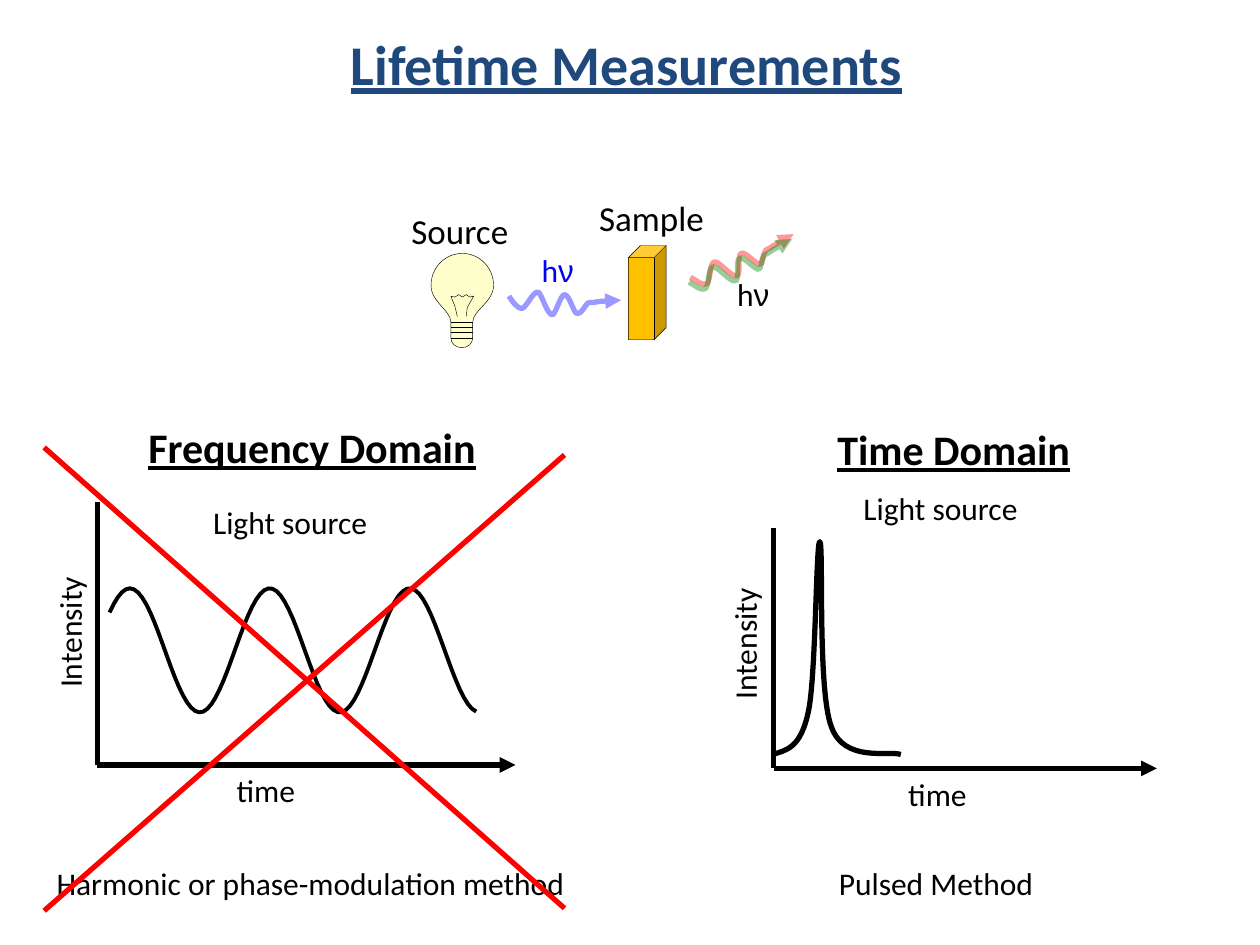
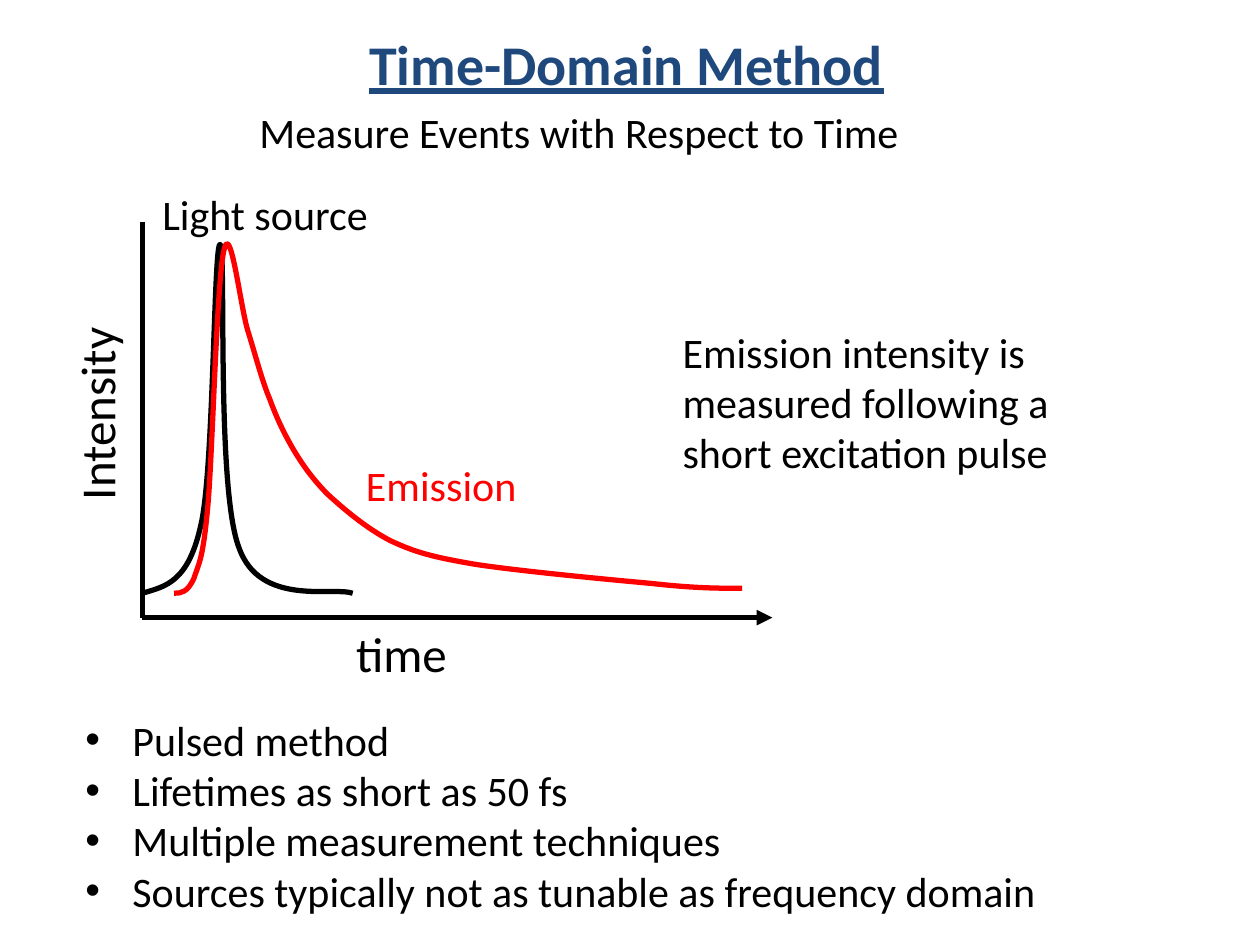
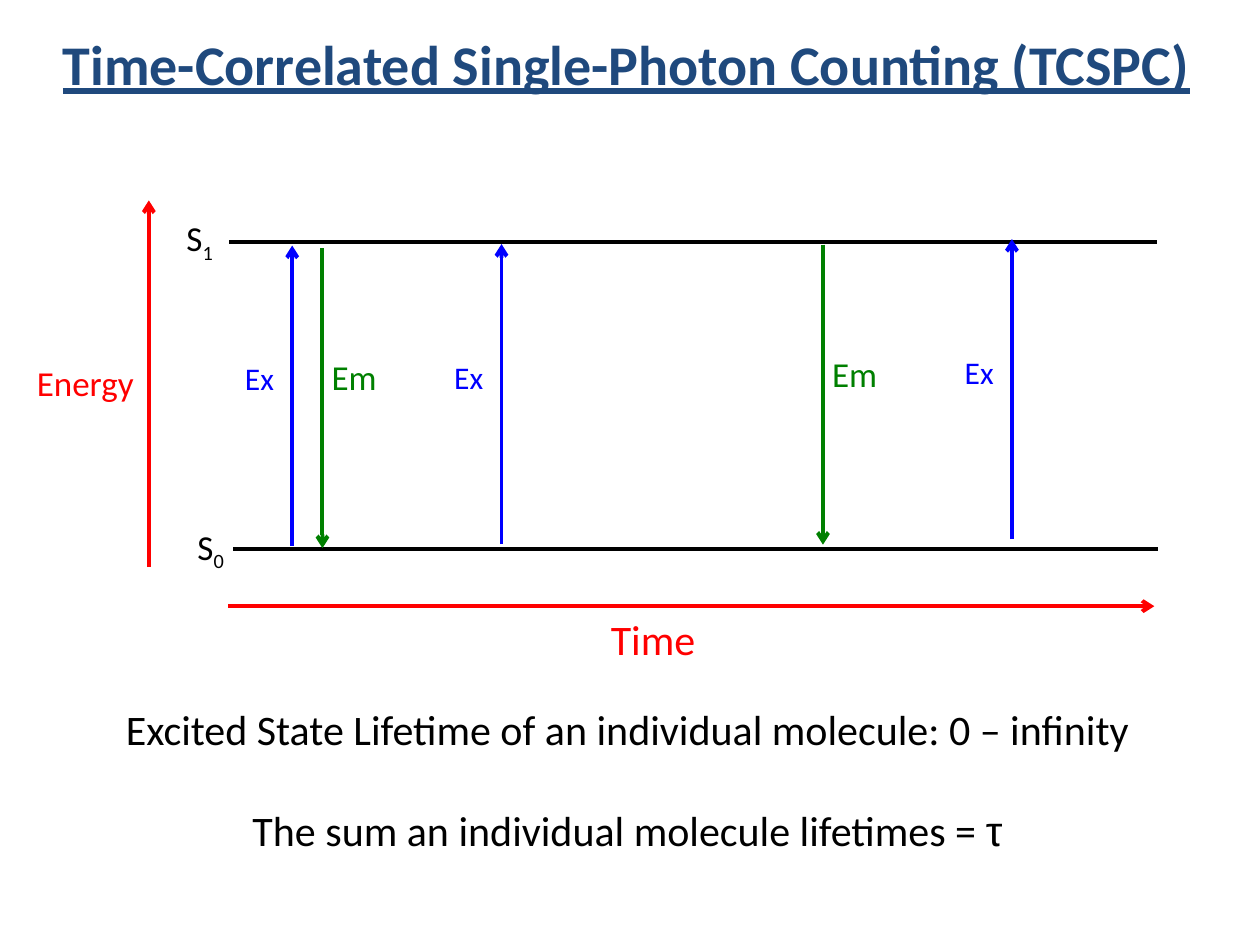
from math import cos, pi

from lxml.etree import SubElement
from pptx import Presentation
from pptx.dml.color import RGBColor
from pptx.enum.shapes import MSO_CONNECTOR, MSO_SHAPE
from pptx.enum.text import MSO_ANCHOR, PP_ALIGN
from pptx.oxml.ns import qn
from pptx.util import Cm, Pt

NAVY = RGBColor(0x1F, 0x49, 0x7D)
BLACK = RGBColor(0x00, 0x00, 0x00)
RED = RGBColor(0xFF, 0x00, 0x00)
BLUE = RGBColor(0x00, 0x00, 0xFF)
GREEN = RGBColor(0x00, 0x80, 0x00)
AMBER = RGBColor(0xFF, 0xC0, 0x00)
CREAM = RGBColor(0xFF, 0xFF, 0xCC)
LEFT, CENTER, RIGHT = PP_ALIGN.LEFT, PP_ALIGN.CENTER, PP_ALIGN.RIGHT
BODY_FONT, SYMBOL_FONT = "Calibri", "Arial"

TITLES = (
    "Lifetime Measurements",
    "Time-Domain Method",
    "Time-Correlated Single-Photon Counting (TCSPC)",
)
TITLE_PLACE = (0.97, 0, 23.32, 2.54)

DOMAIN_HEADINGS = (
    ("Frequency Domain", (2.67, 8.38, 7.24, 1.27)),
    ("Time Domain", (15.95, 8.41, 6.55, 1.27)),
)
DOMAIN_LABELS = (
    ("Light source", (3.97, 10.01, 3.76, 1.02), CENTER, 0),
    ("Intensity", (-1.37, 12.24, 5.54, 1.02), CENTER, 270),
    ("time", (4.52, 15.42, 3.12, 1.02), LEFT, 0),
    ("Harmonic or phase-modulation method", (0.89, 17.3, 10.95, 1.02), LEFT, 0),
    ("Light source", (17.08, 9.73, 3.76, 1.02), CENTER, 0),
    ("Intensity", (13.23, 12.47, 3.56, 1.02), CENTER, 270),
    ("time", (18.06, 15.49, 2.87, 1.02), LEFT, 0),
    ("Pulsed Method", (16.66, 17.3, 5.03, 1.02), LEFT, 0),
)
CROSS = ((0.89, 9.02, 11.38, 18.31), (0.89, 18.36, 11.38, 9.17))

BULB = (
    (9.09, 6.81),
    (9.09, 6.7), (9.09, 6.6), (9.09, 6.5),
    (9.09, 6.25), (8.69, 6.1), (8.69, 5.75),
    (8.69, 5.4), (8.97, 5.11), (9.32, 5.11),
    (9.67, 5.11), (9.95, 5.4), (9.95, 5.75),
    (9.95, 6.1), (9.53, 6.25), (9.53, 6.5),
    (9.53, 6.6), (9.53, 6.7), (9.53, 6.81),
    (9.53, 6.92), (9.44, 7.01), (9.31, 7.01),
    (9.18, 7.01), (9.09, 6.92), (9.09, 6.81),
)
FILAMENT = (
    (9.22, 6.38), (9.17, 6.17), (9.09, 5.97), (9.17, 5.99),
    (9.25, 5.94), (9.32, 5.99), (9.4, 5.94), (9.47, 5.99),
    (9.55, 5.97), (9.42, 6.2), (9.4, 6.38),
)
BULB_BANDS = (6.5, 6.6, 6.7, 6.81)

EXCITATION_WAVE = (
    (12.52, 6.05),
    (12.52, 6.05), (12.09, 6.07), (11.96, 6.1),
    (11.84, 6.1), (11.89, 6.1), (11.84, 6.12),
    (11.79, 6.17), (11.71, 6.35), (11.63, 6.32),
    (11.56, 6.3), (11.48, 5.94), (11.38, 5.94),
    (11.3, 5.94), (11.2, 6.35), (11.13, 6.35),
    (11.02, 6.32), (10.92, 5.92), (10.85, 5.89),
    (10.74, 5.87), (10.62, 6.2), (10.52, 6.22),
    (10.44, 6.22), (10.34, 6.1), (10.26, 5.97),
)
EMITTED_WAVE = (
    (16, 4.72),
    (16, 4.72), (15.62, 4.93), (15.52, 5),
    (15.42, 5.05), (15.44, 5.03), (15.42, 5.08),
    (15.37, 5.13), (15.39, 5.33), (15.32, 5.33),
    (15.24, 5.33), (15.01, 5.05), (14.94, 5.11),
    (14.86, 5.13), (14.94, 5.54), (14.86, 5.56),
    (14.76, 5.61), (14.5, 5.26), (14.4, 5.28),
    (14.3, 5.31), (14.33, 5.66), (14.25, 5.72),
    (14.17, 5.77), (14.05, 5.66), (13.92, 5.59),
)

PULSE = (
    (0, 1),
    (0.11, 0.98), (0.22, 0.97), (0.28, 0.8),
    (0.34, 0.64), (0.34, -0.01), (0.37, 0),
    (0.4, 0.01), (0.35, 0.7), (0.46, 0.87),
    (0.56, 1.04), (0.91, 0.98), (1, 1),
)
EMISSION_DECAY = (
    (3.51, 11.96),
    (3.66, 11.96), (3.78, 11.94), (3.91, 11.66),
    (4.01, 11.35), (4.09, 11.3), (4.19, 10.21),
    (4.29, 9.09), (4.37, 5.61), (4.52, 5.03),
    (4.65, 4.45), (4.85, 6.2), (5, 6.68),
    (5.16, 7.19), (5.28, 7.67), (5.44, 8.05),
    (5.59, 8.46), (5.74, 8.76), (5.92, 9.07),
    (6.12, 9.4), (6.3, 9.65), (6.6, 9.96),
    (6.93, 10.26), (7.37, 10.64), (7.87, 10.9),
    (8.36, 11.13), (8.71, 11.23), (9.6, 11.38),
    (10.46, 11.51), (12.22, 11.68), (13.11, 11.76),
    (14, 11.86), (14.48, 11.86), (14.96, 11.86),
)
METHOD_LABELS = (
    ("Intensity", (-0.97, 7.62, 5.82, 1.45), 28, BLACK, CENTER, 270),
    ("time", (6.93, 12.45, 4.7, 1.45), 28, BLACK, LEFT, 0),
    ("Light source", (1.88, 3.68, 6.93, 1.27), 24, BLACK, CENTER, 0),
    ("Emission", (6.76, 9.14, 4.27, 1.27), 24, RED, CENTER, 0),
    ("Emission intensity is measured following a short excitation pulse",
     (13.51, 6.45, 9.73, 3.33), 24, BLACK, LEFT, 0),
    ("Measure Events with Respect to Time",
     (4.98, 2.03, 15.34, 1.27), 24, BLACK, LEFT, 0),
)
METHOD_POINTS = (
    "Pulsed method",
    "Lifetimes as short as 50 fs",
    "Multiple measurement techniques",
    "Sources typically not as tunable as frequency domain",
)

LEVELS = (
    ("0", (4.7, 11.07, 23.34, 11.07), (3.73, 10.46)),
    ("1", (4.62, 4.88, 23.32, 4.88), (3.51, 4.24)),
)
EXCITATIONS = ((5.89, 11), (10.11, 10.97), (20.4, 10.87))
EMISSIONS = ((6.5, 5), (16.59, 4.93))
TRANSITION_LENGTH = 6.05
LIFETIME_NOTES = (
    "Excited State Lifetime of an individual molecule: 0 – infinity",
    "The sum an individual molecule lifetimes = ",
)


def add_label(page, text, place, size, color=BLACK, align=LEFT, turn=0,
              heading=False, symbol="", wrap=True):
    box = page.shapes.add_textbox(*map(Cm, place))
    box.rotation = turn
    frame = box.text_frame
    frame.word_wrap = wrap
    frame.text = text
    if symbol:
        frame.paragraphs[-1].add_run().text = symbol
    for para in frame.paragraphs:
        para.alignment = align
        for span in para.runs:
            font = span.font
            font.name = SYMBOL_FONT if span.text == symbol else BODY_FONT
            font.size = Pt(size)
            font.color.rgb = color
            if heading:
                font.bold = font.underline = True
    return box


def add_arrowhead(shape, end, kind):
    outline = shape.line._get_or_add_ln()
    SubElement(outline, qn(f"a:{end}"), type=kind)


def add_line(page, ends, color=BLACK, width=3, arrow=None):
    line = page.shapes.add_connector(MSO_CONNECTOR.STRAIGHT, *map(Cm, ends))
    line.line.color.rgb = color
    line.line.width = Pt(width)
    if arrow:
        add_arrowhead(line, "tailEnd", arrow)
    SubElement(line.element.spPr, qn("a:effectLst"))
    return line


def style_shape(shape, color, width, fill=None):
    shape.shadow.inherit = False
    shape.line.color.rgb = color
    shape.line.width = Pt(width)
    if fill is None:
        shape.fill.background()
    else:
        shape.fill.solid()
        shape.fill.fore_color.rgb = fill


def add_outline(page, points, color=BLACK, width=3, fill=None):
    corners = [(Cm(x), Cm(y)) for x, y in points]
    builder = page.shapes.build_freeform(*corners[0])
    builder.add_line_segments(corners[1:], close=False)
    shape = builder.convert_to_shape()
    style_shape(shape, color, width, fill)
    return shape


def add_curve(page, points, color=BLACK, width=3, fill=None):
    shape = add_outline(page, points, color, width, fill)
    route = next(shape.element.iter(qn("a:path")))
    segments = route.findall(qn("a:lnTo"))
    for first in range(0, len(segments), 3):
        bezier = SubElement(route, qn("a:cubicBezTo"))
        for segment in segments[first:first + 3]:
            bezier.append(segment[0])
            route.remove(segment)
    return shape


def add_photon(page, points, color):
    wave = add_curve(page, points, color)
    shade = next(wave.line._get_or_add_ln().iter(qn("a:srgbClr")))
    SubElement(shade, qn("a:alpha"), val="40000")
    add_arrowhead(wave, "headEnd", "triangle")


def add_axes(page, left, top, right, bottom):
    add_line(page, (left, top, left, bottom))
    add_line(page, (left, bottom, right, bottom), arrow="triangle")


def add_pulse(page, left, top, width, height):
    add_curve(page, [(left + x * width, top + y * height) for x, y in PULSE])


def add_page(deck, title):
    page = deck.slides.add_slide(deck.slide_layouts[6])
    box = add_label(page, title, TITLE_PLACE, 32, NAVY, CENTER, heading=True)
    box.text_frame.vertical_anchor = MSO_ANCHOR.MIDDLE
    return page


def draw_bulb(page):
    add_curve(page, BULB, width=0.25, fill=CREAM)
    add_outline(page, FILAMENT, width=0.25)
    for height in BULB_BANDS:
        add_line(page, (9.09, height, 9.53, height), width=0.25)


def draw_setup(page):
    add_label(page, "Source", (7.85, 4.09, 2.84, 1.12), 20, align=CENTER)
    add_label(page, "Sample", (11.46, 3.84, 3.35, 1.12), 20, align=CENTER)
    cuvette = page.shapes.add_shape(
        MSO_SHAPE.CUBE, Cm(12.67), Cm(4.95), Cm(0.76), Cm(1.9))
    cuvette.adjustments[0] = 0.32
    style_shape(cuvette, BLACK, 0.25, AMBER)
    draw_bulb(page)
    add_label(page, "h", (10.67, 4.93, 1.47, 1.02), 18, BLUE, symbol="ν")
    add_photon(page, EXCITATION_WAVE, BLUE)
    add_label(page, "h", (14.61, 5.41, 1.47, 1.02), 18, symbol="ν")
    add_photon(page, EMITTED_WAVE, RED)
    add_photon(page, [(x - 0.03, y + 0.1) for x, y in EMITTED_WAVE], GREEN)


def build_measurements(page):
    add_axes(page, 15.6, 10.64, 23.32, 15.49)
    add_pulse(page, 15.57, 10.92, 2.59, 4.29)
    add_axes(page, 1.96, 10.11, 10.39, 15.42)
    start, crest, period, steps = 2.21, 2.62, 2.82, 90
    across = [start + 7.39 * step / steps for step in range(steps + 1)]
    sine = [(x, 13.11 - 1.25 * cos(2 * pi * (x - crest) / period)) for x in across]
    add_outline(page, sine, width=2.25)
    for text, place in DOMAIN_HEADINGS:
        add_label(page, text, place, 24, align=CENTER, heading=True)
    for text, place, align, turn in DOMAIN_LABELS:
        add_label(page, text, place, 18, align=align, turn=turn)
    draw_setup(page)
    for stroke in CROSS:
        add_line(page, stroke, RED)


def build_method(page):
    add_axes(page, 2.87, 4.47, 15.57, 12.45)
    add_pulse(page, 2.87, 4.93, 4.24, 7.03)
    add_curve(page, EMISSION_DECAY, RED)
    for label in METHOD_LABELS:
        add_label(page, *label)
    box = add_label(page, "\n".join(METHOD_POINTS), (1.47, 14.27, 21.79, 4.37), 24)
    for properties in box.element.iter(qn("a:pPr")):
        properties.set("marL", str(Cm(0.95)))
        properties.set("indent", str(Cm(-0.95)))
        SubElement(properties, qn("a:buFont"), typeface=SYMBOL_FONT)
        SubElement(properties, qn("a:buChar"), char="•")


def build_counting(page):
    for number, ends, corner in LEVELS:
        add_line(page, ends, width=2.25)
        box = add_label(page, "S", (*corner, 1.4, 1.4), 20, wrap=False)
        span = box.text_frame.paragraphs[0].add_run()
        span.text = number
        span.font.name = BODY_FONT
        span.font.size = Pt(20)
        span.font.color.rgb = BLACK
        list(box.element.iter(qn("a:rPr")))[-1].set("baseline", "-25000")
    for x, bottom in EXCITATIONS:
        add_line(page, (x, bottom, x, bottom - TRANSITION_LENGTH), BLUE, 2.25, "arrow")
        add_label(page, "Ex", (x - 1.42, bottom - 3.88, 1.52, 1.02), 18, BLUE, CENTER)
    for x, top in EMISSIONS:
        add_line(page, (x, top, x, top + TRANSITION_LENGTH), GREEN, 2.25, "arrow")
        add_label(page, "Em", (x - 0.48, top + 2.05, 2.24, 1.12), 20, GREEN, CENTER)
    add_line(page, (3, 11.43, 3, 4.04), RED, 2.25, "arrow")
    add_label(page, "Energy", (0.28, 7.16, 2.67, 1.12), 20, RED, RIGHT)
    add_line(page, (4.6, 12.22, 23.27, 12.22), RED, 2.25, "arrow")
    add_label(page, "Time", (12.01, 12.24, 2.31, 1.27), 24, RED, CENTER)
    notes = add_label(page, "\n".join(LIFETIME_NOTES), (2.11, 14.05, 21.08, 3.33),
                      24, align=CENTER, symbol="τ")
    notes.text_frame.paragraphs[1].space_before = Pt(29)


def main():
    deck = Presentation()
    deck.slide_width, deck.slide_height = Cm(25.4), Cm(19.05)
    builders = (build_measurements, build_method, build_counting)
    for title, build in zip(TITLES, builders):
        build(add_page(deck, title))
    deck.save("out.pptx")


if __name__ == "__main__":
    main()
